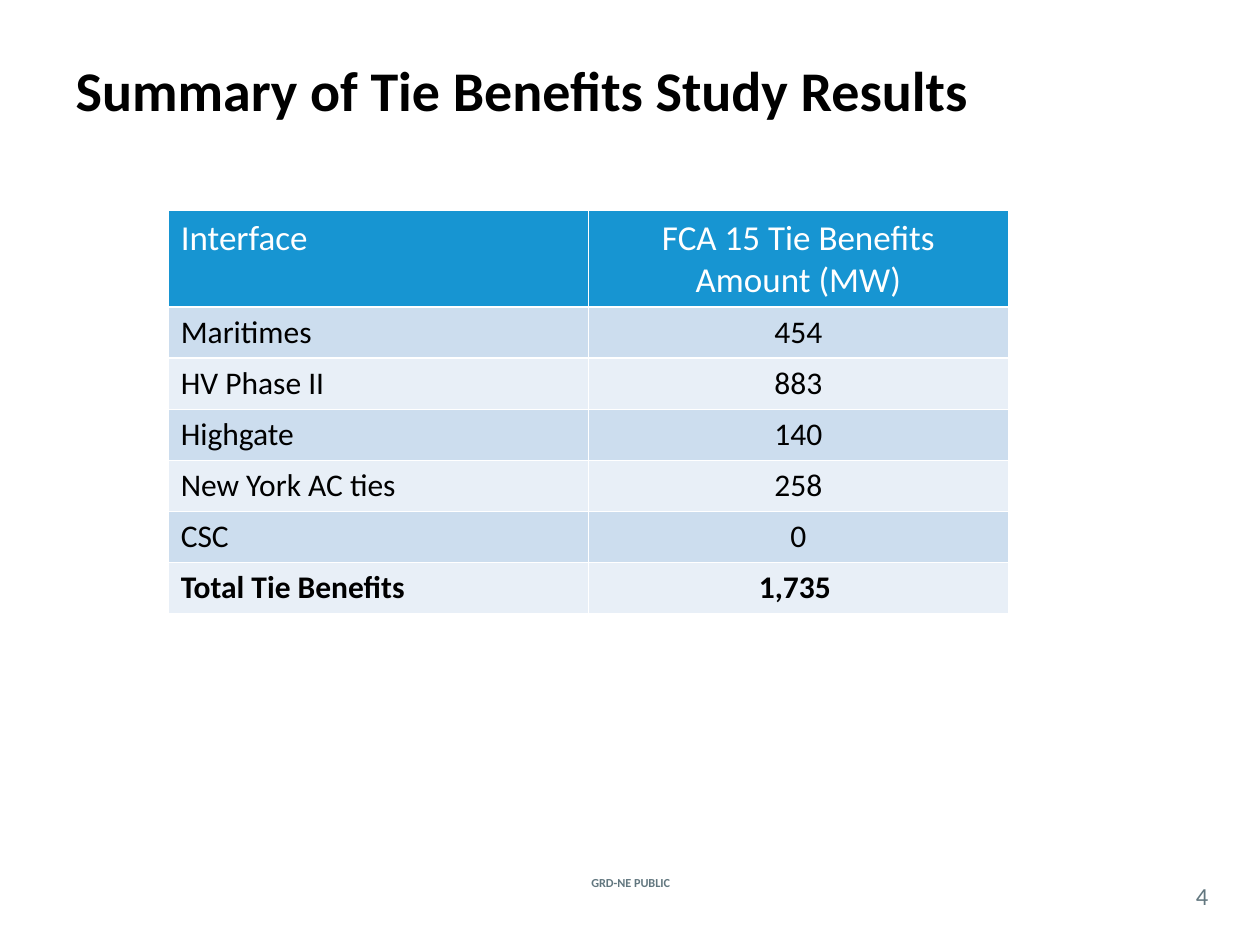
from dataclasses import dataclass

import pptx
import pptx.dml.color
import pptx.enum.text
import pptx.util

Cm = pptx.util.Cm
Align = pptx.enum.text.PP_ALIGN
Anchor = pptx.enum.text.MSO_ANCHOR

FONT = "Calibri"
BLACK, WHITE, GREY = "000000", "FFFFFF", "62777F"
HEADER_FILL = "1795D2"
BAND_FILLS = ("CCDDEE", "E8EFF7")
COLUMN_WIDTH = Cm(8.47)
HEADER_HEIGHT, ROW_HEIGHT = Cm(1.95), Cm(1.03)


@dataclass(frozen=True)
class Style:
    size: int
    color: str
    bold: bool = False
    align: Align = Align.LEFT


@dataclass(frozen=True)
class Label:
    text: str
    left: float
    top: float
    width: float
    height: float
    style: Style


@dataclass(frozen=True)
class Row:
    interface: str
    amount: str
    bold: bool = False


TITLE = Label("Summary of Tie Benefits Study Results", 1.27, 0.2, 22.86, 3.18,
              Style(32, BLACK, True))
FOOTERS = (
    Label("GRD-NE PUBLIC", 10.85, 17.58, 3.73, 0.43, Style(7, GREY, True, Align.CENTER)),
    Label("4", 23.7, 17.68, 1.07, 0.74, Style(14, GREY, False, Align.CENTER)),
)
HEADER = Row("Interface", "FCA 15 Tie Benefits Amount (MW)")
ROWS = (
    Row("Maritimes", "454"),
    Row("HV Phase II", "883"),
    Row("Highgate", "140"),
    Row("New York AC ties", "258"),
    Row("CSC", "0"),
    Row("Total Tie Benefits", "1,735 ", True),
)


def rgb(color: str) -> pptx.dml.color.RGBColor:
    return pptx.dml.color.RGBColor.from_string(color)


def write(frame: pptx.text.text.TextFrame, text: str, style: Style) -> None:
    frame.text = text
    para = frame.paragraphs[0]
    para.alignment = style.align
    font = para.runs[0].font
    font.name = FONT
    font.size = pptx.util.Pt(style.size)
    font.bold = style.bold
    font.color.rgb = rgb(style.color)


def add_title(page: pptx.slide.Slide, label: Label) -> None:
    title = page.shapes.title
    title.left, title.top = Cm(label.left), Cm(label.top)
    title.width, title.height = Cm(label.width), Cm(label.height)
    title.text_frame.vertical_anchor = Anchor.MIDDLE
    write(title.text_frame, label.text, label.style)


def add_label(page: pptx.slide.Slide, label: Label) -> None:
    box = page.shapes.add_textbox(Cm(label.left), Cm(label.top),
                                  Cm(label.width), Cm(label.height))
    frame = box.text_frame
    frame.word_wrap = True
    frame.vertical_anchor = Anchor.MIDDLE
    frame.margin_left = frame.margin_right = frame.margin_top = frame.margin_bottom = 0
    write(frame, label.text, label.style)


def fill_row(table: pptx.table.Table, index: int, row: Row,
             size: int, color: str, fill: str) -> None:
    columns = ((row.interface, Align.LEFT), (row.amount, Align.CENTER))
    for column, (text, align) in enumerate(columns):
        cell = table.cell(index, column)
        cell.fill.solid()
        cell.fill.fore_color.rgb = rgb(fill)
        write(cell.text_frame, text, Style(size, color, row.bold, align))


def add_benefits_table(page: pptx.slide.Slide) -> None:
    table = page.shapes.add_table(
        len(ROWS) + 1, 2, Cm(3.39), Cm(4.24),
        COLUMN_WIDTH * 2, HEADER_HEIGHT + ROW_HEIGHT * len(ROWS)).table
    for column in table.columns:
        column.width = COLUMN_WIDTH
    table.rows[0].height = HEADER_HEIGHT
    fill_row(table, 0, HEADER, 20, WHITE, HEADER_FILL)
    for index, row in enumerate(ROWS, start=1):
        table.rows[index].height = ROW_HEIGHT
        fill_row(table, index, row, 18, BLACK, BAND_FILLS[(index - 1) % 2])


def main() -> None:
    deck = pptx.Presentation()
    deck.slide_width, deck.slide_height = Cm(25.4), Cm(19.05)
    page = deck.slides.add_slide(deck.slide_layouts[5])
    for footer in FOOTERS:
        add_label(page, footer)
    add_title(page, TITLE)
    add_benefits_table(page)
    deck.save("out.pptx")


if __name__ == "__main__":
    main()
